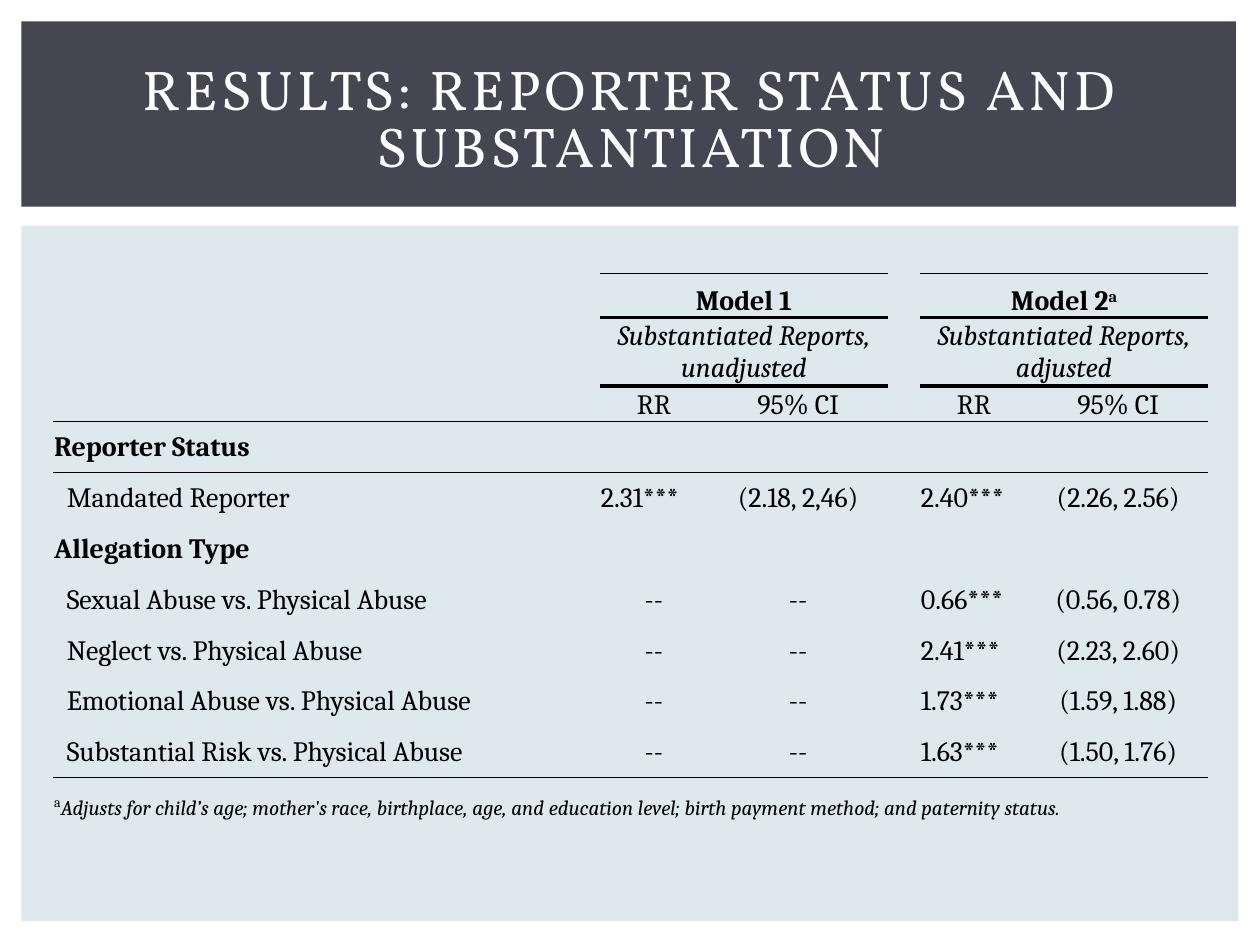
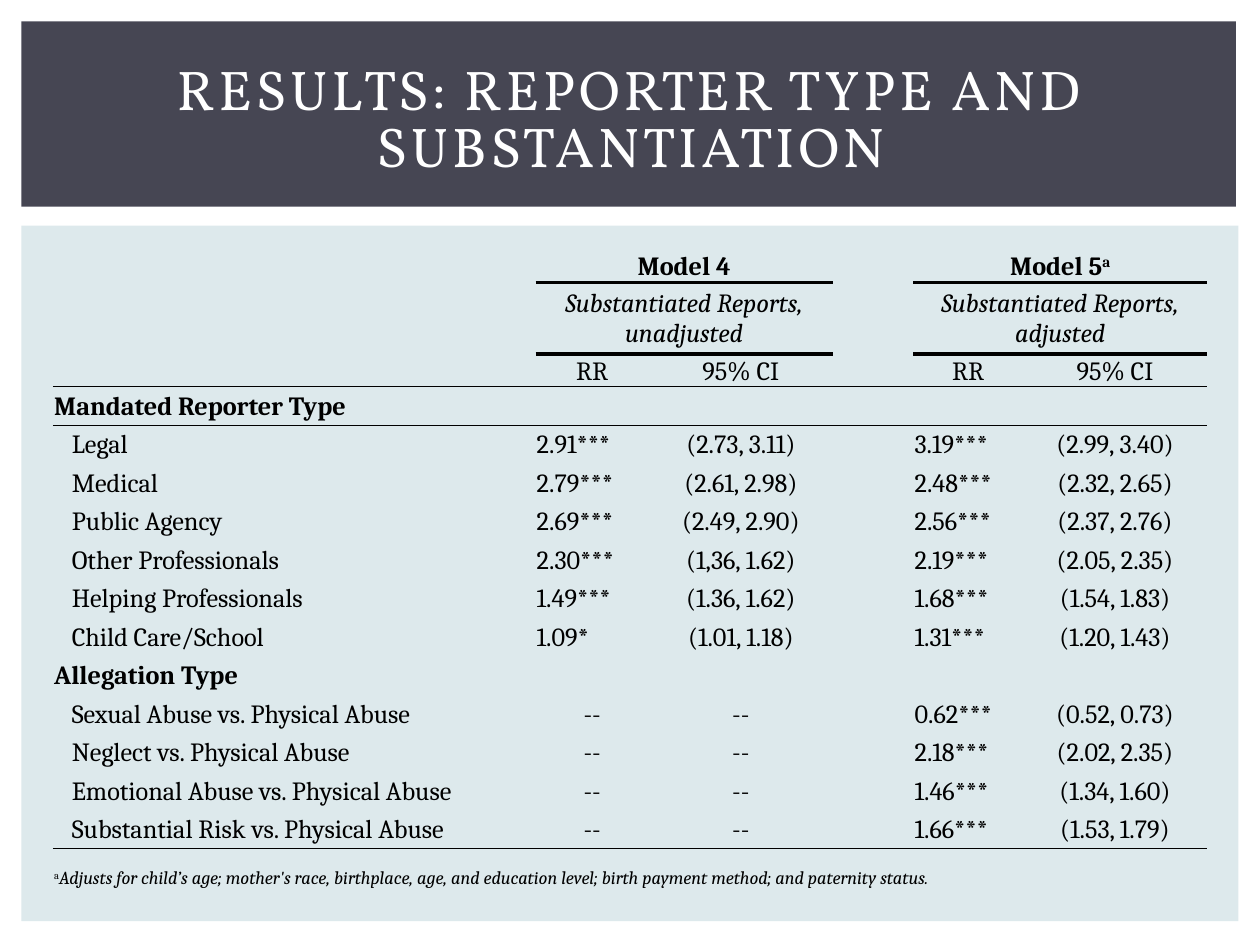
from lxml.etree import SubElement
from pptx import Presentation
from pptx.dml.color import RGBColor
from pptx.enum.shapes import MSO_SHAPE
from pptx.enum.text import MSO_ANCHOR, PP_ALIGN
from pptx.oxml.ns import qn
from pptx.util import Inches, Pt

PANEL = RGBColor(0xDD, 0xE9, 0xEC)
BAND = RGBColor(0x46, 0x46, 0x53)
WHITE = RGBColor(0xFF, 0xFF, 0xFF)
BLACK = RGBColor(0x00, 0x00, 0x00)
NO_GRID = "{2D5ABB26-0587-4C30-8999-92F81FD0307C}"
THIN, THICK = 0.5, 2
FOOTNOTE = ("Adjusts for child’s age; mother's race, birthplace, age, and education level; "
            "birth payment method; and paternity status.")

STATUS_ROWS = [
    ("Reporter Status",),
    ("Mandated Reporter", "2.31***", "(2.18, 2,46)", "2.40***", "(2.26, 2.56)"),
    ("Allegation Type",),
    ("Sexual Abuse vs. Physical Abuse", "--", "--", "0.66***", "(0.56, 0.78)"),
    ("Neglect vs. Physical Abuse", "--", "--", "2.41***", "(2.23, 2.60)"),
    ("Emotional Abuse vs. Physical Abuse", "--", "--", "1.73***", "(1.59, 1.88)"),
    ("Substantial Risk vs. Physical Abuse", "--", "--", "1.63***", "(1.50, 1.76)"),
]
TYPE_ROWS = [
    ("Mandated Reporter Type",),
    ("Legal", "2.91***", "(2.73, 3.11)", "3.19***", "(2.99, 3.40)"),
    ("Medical", "2.79***", "(2.61, 2.98)", "2.48***", "(2.32, 2.65)"),
    ("Public Agency", "2.69***", "(2.49, 2.90)", "2.56***", "(2.37, 2.76)"),
    ("Other Professionals", "2.30***", "(1,36, 1.62)", "2.19***", "(2.05, 2.35)"),
    ("Helping Professionals", "1.49***", "(1.36, 1.62)", "1.68***", "(1.54, 1.83)"),
    ("Child Care/School", "1.09*", "(1.01, 1.18)", "1.31***", "(1.20, 1.43)"),
    ("Allegation Type",),
    ("Sexual Abuse vs. Physical Abuse", "--", "--", "0.62***", "(0.52, 0.73)"),
    ("Neglect vs. Physical Abuse", "--", "--", "2.18***", "(2.02, 2.35)"),
    ("Emotional Abuse vs. Physical Abuse", "--", "--", "1.46***", "(1.34, 1.60)"),
    ("Substantial Risk vs. Physical Abuse", "--", "--", "1.66***", "(1.53, 1.79)"),
]


class Deck:
    """Results slides with a title band, a tinted panel and a regression table."""

    def __init__(self):
        self.prs = Presentation()
        self.prs.slide_width, self.prs.slide_height = Inches(10), Inches(7.5)
        self.s = None
        self.size = 16

    def slide(self, title):
        self.s = self.prs.slides.add_slide(self.prs.slide_layouts[6])
        self.rect(0.17, 1.79, 9.66, 5.52, PANEL)
        self.rect(0.17, 0.17, 9.64, 1.47, BAND)
        self.title(title)

    def rect(self, x, y, w, h, color):
        sp = self.s.shapes.add_shape(MSO_SHAPE.RECTANGLE, Inches(x), Inches(y), Inches(w), Inches(h))
        sp.shadow.inherit = False
        sp.fill.solid()
        sp.fill.fore_color.rgb = color
        sp.line.fill.background()

    def title(self, text):
        tf = self.s.shapes.add_textbox(Inches(0.42), Inches(0.39), Inches(9.17), Inches(1.15)).text_frame
        tf.word_wrap = True
        tf.vertical_anchor = MSO_ANCHOR.MIDDLE
        tf.text = text
        p = tf.paragraphs[0]
        p.alignment = PP_ALIGN.CENTER
        p.line_spacing = 0.86
        r = p.runs[0]
        self.style(r, 32, "Vollkorn", WHITE)
        r.font._element.set("spc", "200")

    def style(self, r, size, name="Cambria", color=BLACK, bold=False, italic=False):
        r.font.size, r.font.name = Pt(size), name
        r.font.bold, r.font.italic = bold, italic
        r.font.color.rgb = color

    def superscript(self, p, size, bold=False):
        r = p.add_run()
        r.text = "a"
        self.style(r, size, bold=bold)
        r.font._element.set("baseline", "30000")

    def label(self, cell, text, align=PP_ALIGN.CENTER, anchor=MSO_ANCHOR.MIDDLE, indent=0.01, **font):
        cell.text_frame.text = text
        cell.vertical_anchor = anchor
        cell.margin_left = Inches(indent)
        p = cell.text_frame.paragraphs[0]
        p.alignment = align
        self.style(p.runs[0], self.size, **font)
        return p

    def border(self, cells, side, width):
        for cell in cells:
            pr = cell._tc.get_or_add_tcPr()
            ln = SubElement(pr, qn(f"a:ln{side}"), w=str(Pt(width)))
            fill = SubElement(ln, qn("a:solidFill"))
            SubElement(fill, qn("a:srgbClr"), val=str(BLACK))

    def prepare(self, cell, fill):
        cell.margin_left = cell.margin_right = cell.margin_top = Inches(0.01)
        cell.margin_bottom = 0
        end = cell.text_frame.paragraphs[0]._p.get_or_add_endParaRPr()
        end.set("sz", str(self.size * 100))
        if fill:
            cell.fill.solid()
            cell.fill.fore_color.rgb = fill
        else:
            cell.fill.background()

    def results(self, rows, models, top, widths, head, body, foot, size, indent, note_sizes,
                fill=None, top_rule=False):
        self.size = size
        heights = head + [body / len(rows)] * len(rows) + [foot]
        table = self.s.shapes.add_table(len(heights), len(widths), Inches(0.42), Inches(top),
                                        Inches(sum(widths)), Inches(sum(heights))).table
        table.first_row = table.horz_banding = False
        table._tbl.tblPr.find(qn("a:tableStyleId")).text = NO_GRID
        for col, w in zip(table.columns, widths):
            col.width = Inches(w)
        for row, h in zip(table.rows, heights):
            row.height = Inches(h)
        grid = [list(row.cells) for row in table.rows]
        self.rules(grid, top_rule)
        for cell in table.iter_cells():
            self.prepare(cell, fill)
        self.header(grid, models)
        for cells, values in zip(grid[3:], rows):
            self.result_row(cells, values, indent)
        self.footnote(grid[-1], note_sizes)

    def rules(self, grid, top_rule):
        for c in (1, 4):
            if top_rule:
                self.border(grid[0][c:c + 2], "T", THIN)
            self.border(grid[0][c:c + 2], "B", THICK)
            self.border(grid[1][c:c + 2], "T", THICK)
        for above, below in ((2, 3), (-2, -1)):
            self.border(grid[above], "B", THIN)
            self.border(grid[below], "T", THIN)

    def header(self, grid, models):
        for c, model, kind in zip((1, 4), models, ("unadjusted", "adjusted")):
            for row in grid[:2]:
                row[c].merge(row[c + 1])
            p = self.label(grid[0][c], model, anchor=MSO_ANCHOR.BOTTOM, bold=True)
            if kind == "adjusted":
                self.superscript(p, self.size, bold=True)
            self.label(grid[1][c], f"Substantiated Reports, {kind}", italic=True)
            for cell, measure in zip(grid[2][c:], ("RR", "95% CI")):
                self.label(cell, measure, anchor=MSO_ANCHOR.BOTTOM)

    def result_row(self, cells, values, indent):
        name, *numbers = values
        self.label(cells[0], name, PP_ALIGN.LEFT, indent=indent if numbers else 0.01, bold=not numbers)
        for c, number in zip((1, 2, 4, 5), numbers):
            align = PP_ALIGN.LEFT if number.endswith("*") else PP_ALIGN.CENTER
            self.label(cells[c], number, align)

    def footnote(self, cells, sizes):
        cells[0].merge(cells[-1])
        cells[0].vertical_anchor = MSO_ANCHOR.MIDDLE
        p = cells[0].text_frame.paragraphs[0]
        self.superscript(p, sizes[0])
        r = p.add_run()
        r.text = FOOTNOTE
        self.style(r, sizes[1], italic=True)


def main():
    deck = Deck()
    deck.slide("RESULTS: REPORTER STATUS AND SUBSTANTIATION")
    deck.results(STATUS_ROWS, ("Model 1", "Model 2"), top=2.17,
                 widths=[4.34, 0.86, 1.43, 0.25, 0.86, 1.43], head=[0.35, 0.51, 0.28],
                 body=2.83, foot=0.46, size=16, indent=0.11, note_sizes=(14, 12), top_rule=True)
    deck.slide("RESULTS: REPORTER TYPE AND SUBSTANTIATION")
    deck.results(TYPE_ROWS, ("Model 4", "Model 5"), top=1.92,
                 widths=[3.83, 0.9, 1.46, 0.64, 0.87, 1.46], head=[0.32, 0.57, 0.25],
                 body=3.67, foot=0.47, size=15, indent=0.15, note_sizes=(10.5, 10.5), fill=PANEL)
    deck.prs.save("out.pptx")


if __name__ == "__main__":
    main()
